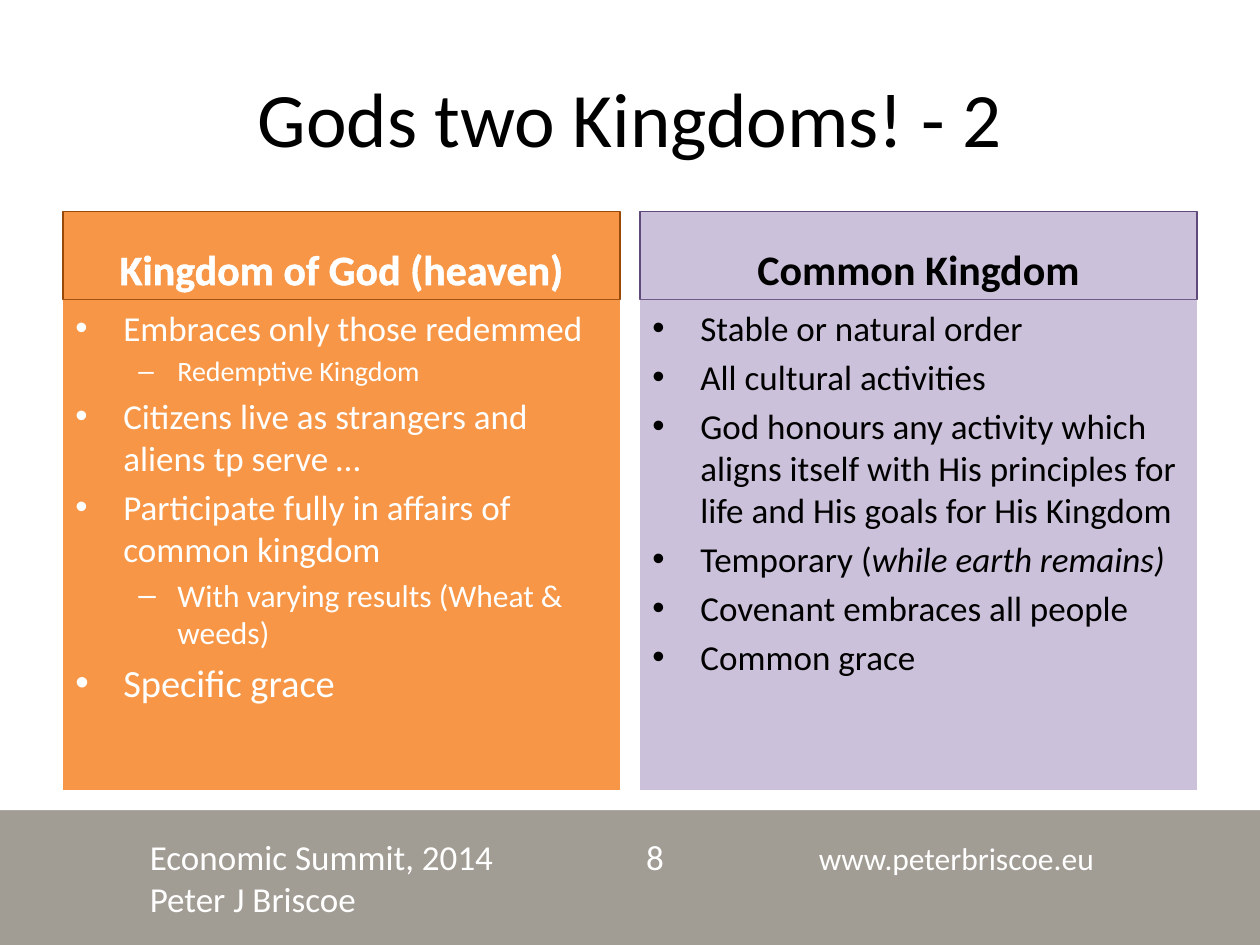
from dataclasses import dataclass

from lxml.etree import SubElement
from pptx import Presentation
from pptx.dml.color import RGBColor
from pptx.enum.shapes import MSO_SHAPE
from pptx.enum.text import MSO_ANCHOR, PP_ALIGN
from pptx.oxml import parse_xml
from pptx.oxml.ns import nsdecls, qn
from pptx.util import Inches, Pt

FONT = "Calibri"
WHITE, BLACK = "FFFFFF", "000000"
INDENTS = [(0.38, -0.38, "•"), (0.81, -0.31, "–")]


@dataclass
class Item:
    text: str
    size: int = 20
    level: int = 0
    italic_tail: str = ""


@dataclass
class Column:
    left: float
    heading: str
    fill: str
    border: str
    color: str
    items: list[Item]
    outlined: bool = False


COLUMNS = [
    Column(0.5, "Kingdom of God (heaven)", "F79646", "984807", WHITE, [
        Item("Embraces only those redemmed"),
        Item("Redemptive Kingdom", 16, 1),
        Item("Citizens live as strangers and aliens tp serve …"),
        Item("Participate fully in affairs of common kingdom"),
        Item("With varying results (Wheat & weeds)", 18, 1),
        Item("Specific grace", 22),
    ], outlined=True),
    Column(5.08, "Common Kingdom", "CCC1DA", "604A7B", BLACK, [
        Item("Stable or natural order"),
        Item("All cultural activities"),
        Item("God honours any activity which aligns itself with His principles "
             "for life and His goals for His Kingdom"),
        Item("Temporary (", italic_tail="while earth remains)"),
        Item("Covenant embraces all people"),
        Item("Common grace"),
    ]),
]


def rgb(value: str) -> RGBColor:
    return RGBColor.from_string(value)


def add_text(p, text: str, *, size: float, color: str, bold=False, italic=False, outline=False):
    r = p.add_run()
    r.text = text
    r.font.name, r.font.size = FONT, Pt(size)
    r.font.bold, r.font.italic = bold, italic
    r.font.color.rgb = rgb(color)
    if outline:
        r.font._element.insert(0, parse_xml(
            f'<a:ln {nsdecls("a")} w="9525"><a:solidFill>'
            f'<a:srgbClr val="{color}"/></a:solidFill></a:ln>'))


def add_rect(s, left: float, top: float, width: float, height: float, fill: str, border=None):
    sp = s.shapes.add_shape(MSO_SHAPE.RECTANGLE, Inches(left), Inches(top),
                            Inches(width), Inches(height))
    sp.shadow.inherit = False
    sp.fill.solid()
    sp.fill.fore_color.rgb = rgb(fill)
    if border:
        sp.line.color.rgb = rgb(border)
        sp.line.width = Pt(0.75)
    else:
        sp.line.fill.background()
    sp.text_frame.word_wrap = True
    return sp


def add_box(s, left: float, top: float, width: float, height: float):
    tf = s.shapes.add_textbox(Inches(left), Inches(top), Inches(width), Inches(height)).text_frame
    tf.word_wrap = True
    return tf


def add_item(p, item: Item, color: str, first: bool):
    margin, indent, bullet = INDENTS[item.level]
    p.alignment, p.level = PP_ALIGN.LEFT, item.level
    pPr = p._p.get_or_add_pPr()
    pPr.set("marL", str(Inches(margin)))
    pPr.set("indent", str(Inches(indent)))
    SubElement(pPr, qn("a:buFont"), typeface="Arial")
    SubElement(pPr, qn("a:buChar"), char=bullet)
    p.space_before = Pt(0 if first else item.size * 0.2)
    add_text(p, item.text, size=item.size, color=color)
    if item.italic_tail:
        add_text(p, item.italic_tail, size=item.size, color=color, italic=True)


def add_column(s, column: Column):
    tf = add_rect(s, column.left, 1.68, 4.42, 0.7, column.fill, column.border).text_frame
    tf.vertical_anchor = MSO_ANCHOR.BOTTOM
    p = tf.paragraphs[0]
    p.alignment = PP_ALIGN.CENTER
    add_text(p, column.heading, size=24, color=column.color, bold=True, outline=column.outlined)
    tf = add_rect(s, column.left, 2.38, 4.42, 3.89, column.fill).text_frame
    tf.vertical_anchor = MSO_ANCHOR.TOP
    for i, item in enumerate(column.items):
        p = tf.add_paragraph() if i else tf.paragraphs[0]
        add_item(p, item, column.color, first=i == 0)


def add_footer(s):
    tf = add_box(s, 1.09, 6.58, 8.55, 0.77)
    p = tf.paragraphs[0]
    tabs = SubElement(p._p.get_or_add_pPr(), qn("a:tabLst"))
    for position in (3.94, 5.31):
        SubElement(tabs, qn("a:tab"), pos=str(Inches(position)), algn="l")
    add_text(p, "Economic Summit, 2014\t8\t", size=20, color=WHITE)
    add_text(p, "www.peterbriscoe.eu", size=18, color=WHITE)
    add_text(tf.add_paragraph(), "Peter J Briscoe", size=20, color=WHITE)


def main():
    """Build the two kingdoms slide."""
    prs = Presentation()
    prs.slide_width, prs.slide_height = Inches(10), Inches(7.5)
    s = prs.slides.add_slide(prs.slide_layouts[6])
    s.background.fill.solid()
    s.background.fill.fore_color.rgb = rgb("A19C94")
    add_rect(s, 0, 0, 10, 6.43, WHITE)
    add_footer(s)
    tf = add_box(s, 0.5, 0.3, 9, 1.25)
    tf.vertical_anchor = MSO_ANCHOR.MIDDLE
    p = tf.paragraphs[0]
    p.alignment = PP_ALIGN.CENTER
    add_text(p, "Gods two Kingdoms! - 2", size=44, color=BLACK)
    for column in COLUMNS:
        add_column(s, column)
    prs.save("out.pptx")


if __name__ == "__main__":
    main()
